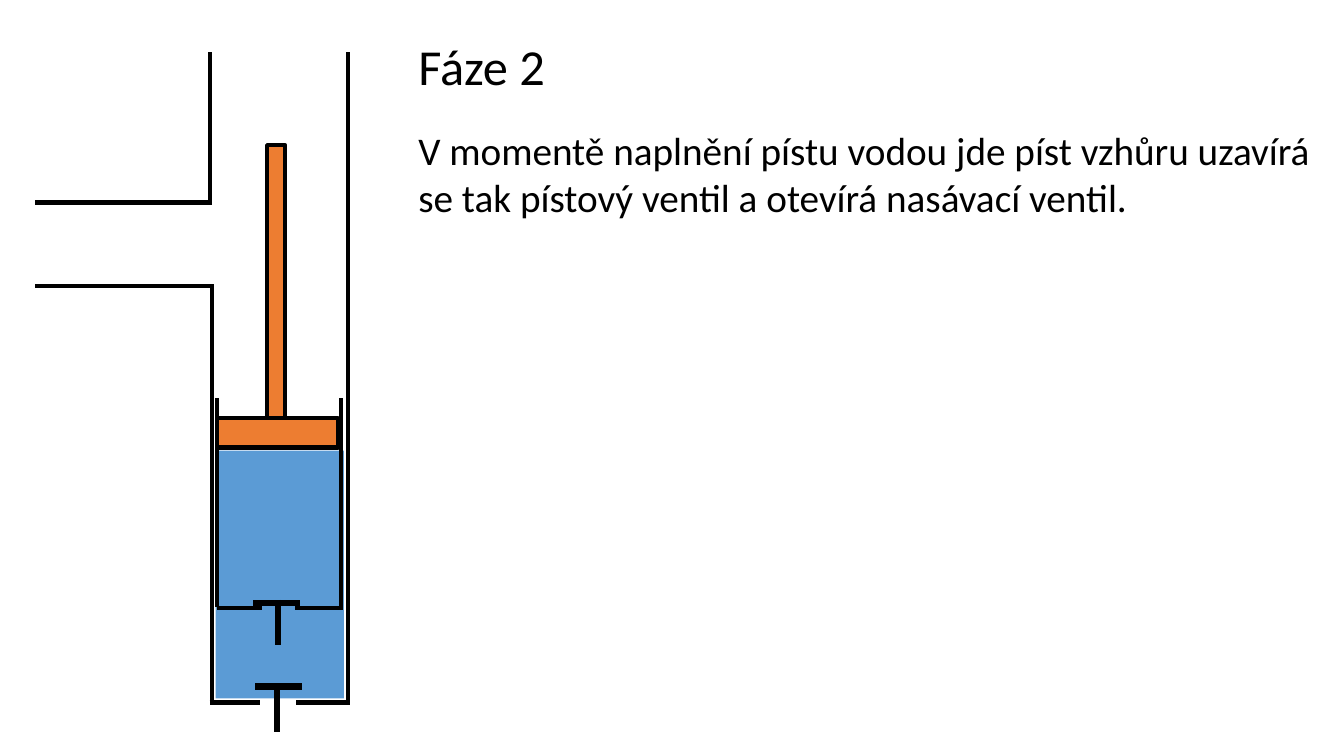
from lxml import etree
from pptx import Presentation
from pptx.dml.color import RGBColor
from pptx.enum.shapes import MSO_CONNECTOR, MSO_SHAPE
from pptx.enum.text import MSO_AUTO_SIZE
from pptx.oxml.ns import qn
from pptx.util import Inches, Pt

STRAIGHT = MSO_CONNECTOR.STRAIGHT
RECT = MSO_SHAPE.RECTANGLE
GROW = MSO_AUTO_SIZE.SHAPE_TO_FIT_TEXT
BLACK, WATER, METAL = "000000", "5B9BD5", "ED7D31"
WALL, VALVE = 3, 4.5


def color(code):
    return RGBColor.from_string(code)


def assign(target, values):
    for name, value in values.items():
        setattr(target, name, value)


class Board:
    """Holds the style, the slide and the shape tree being drawn on."""
    font = "Calibri"

    def __init__(self, slide):
        self.slide = slide
        self.home = slide.shapes

    def group(self):
        """Send the elements that follow to a new group."""
        self.home = self.slide.shapes.add_group_shape().shapes

    def top(self):
        """Send the elements that follow to the slide itself."""
        self.home = self.slide.shapes

    def line(self, x1, y1, x2, y2, width=WALL):
        link = self.home.add_connector(
            STRAIGHT, *(Inches(v) for v in (x1, y1, x2, y2)))
        link.line.color.rgb = color(BLACK)
        link.line.width = Pt(width)
        etree.SubElement(link._element.spPr, qn("a:effectLst"))

    def rect(self, box, fill, edge=None):
        """Draw a filled box, outlined only when an edge colour is given."""
        shape = self.home.add_shape(RECT, *(Inches(v) for v in box))
        shape.shadow.inherit = False
        shape.fill.solid()
        shape.fill.fore_color.rgb = color(fill)
        if edge:
            shape.line.color.rgb = color(edge)
            shape.line.width = Pt(WALL)
        else:
            shape.line.fill.background()

    def text(self, box, parts):
        """Write one paragraph for each (words, size, space before)."""
        frame = self.home.add_textbox(*(Inches(v) for v in box)).text_frame
        assign(frame, {"word_wrap": True, "auto_size": GROW})
        for i, (words, size, gap) in enumerate(parts):
            para = frame.add_paragraph() if i else frame.paragraphs[0]
            para.space_before = Pt(gap)
            run = para.add_run()
            run.text = words
            assign(run.font, {"name": self.font, "size": Pt(size)})
            run.font.color.rgb = color(BLACK)


def draw_pipe(board):
    board.group()
    left, right, base = 2.1, 3.45, 6.97
    top, upper, lower = 0.52, 2.01, 2.84
    board.line(left, lower, left, base)
    board.line(right, top, right, base)
    board.line(0.35, upper, left, upper)
    board.line(0.35, lower, left + 0.02, lower)
    board.line(left - 0.02, base, 2.58, base)
    board.line(2.94, base, right + 0.02, base)
    board.line(2.08, top, 2.08, upper)
    board.line(2.53, 6.81, 3, 6.81, VALVE)
    board.line(2.75, 6.85, 2.75, 7.26, VALVE)


def draw_piston(board):
    board.group()
    left, right, base = 2.15, 3.38, 6.03
    for x in (left, right):
        board.line(x, 3.95, x, base - 0.01)
    board.line(left, base, 2.6, base)
    board.line(2.93, base, right + 0.02, base)
    board.rect((left, 4.15, 1.2, 0.29), METAL, BLACK)
    board.rect((2.65, 1.44, 0.18, 2.71), METAL, BLACK)
    board.line(2.51, 5.98, 2.98, 5.98, VALVE)
    board.line(2.76, 5.95, 2.76, 6.4, VALVE)


def main():
    deck = Presentation()
    assign(deck, {"slide_width": Inches(13.33), "slide_height": Inches(7.5)})
    board = Board(deck.slides.add_slide(deck.slide_layouts[6]))
    board.rect((2.14, 4.47, 1.27, 2.46), WATER)
    draw_pipe(board)
    draw_piston(board)
    board.top()
    board.text((4.05, 0.3, 9.05, 1.95), [
        ("Fáze 2", 36, 0),
        ("V momentě naplnění pístu vodou jde píst vzhůru uzavírá "
         "se tak pístový ventil a otevírá nasávací ventil.", 28, 22),
    ])
    deck.save("out.pptx")


if __name__ == "__main__":
    main()
